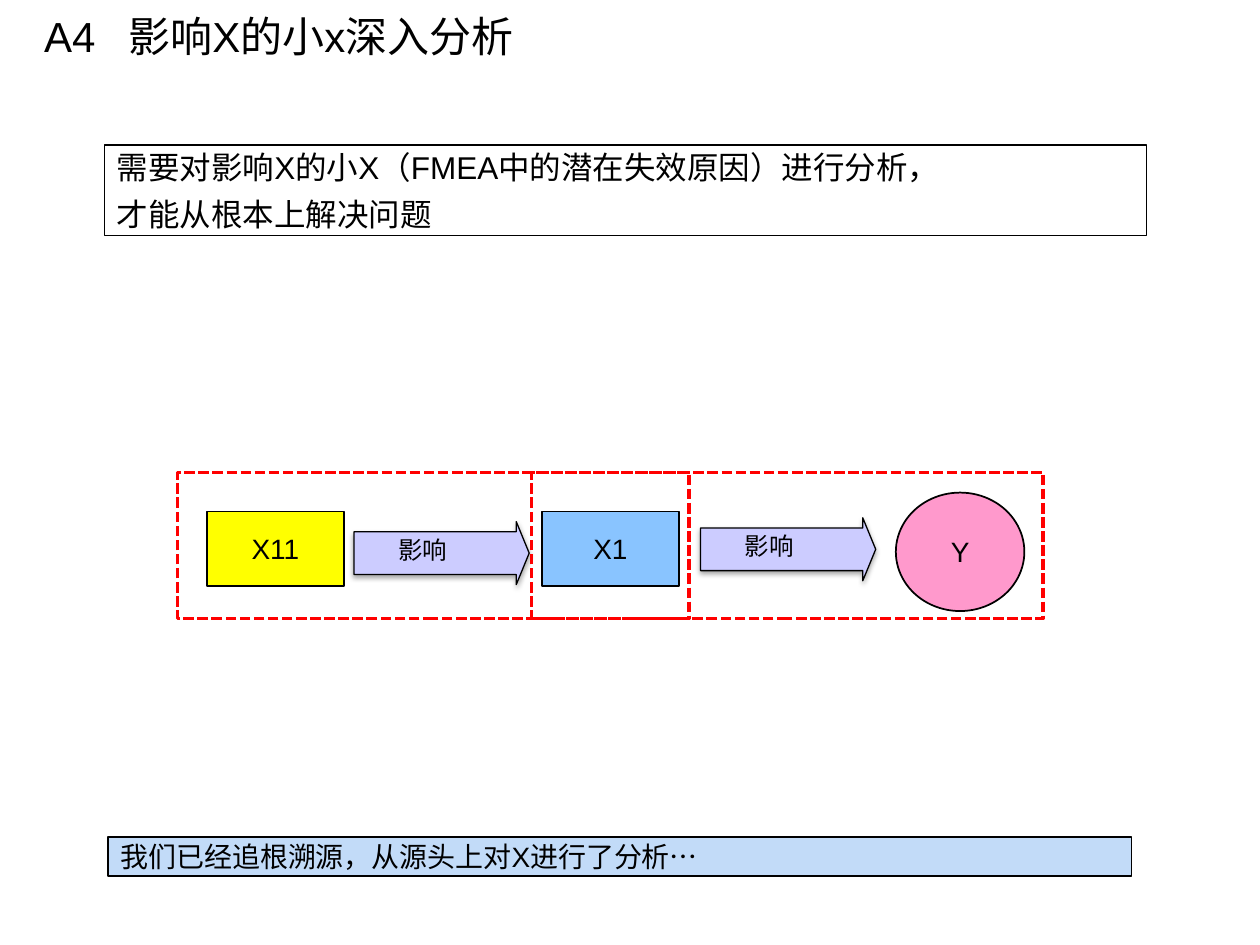
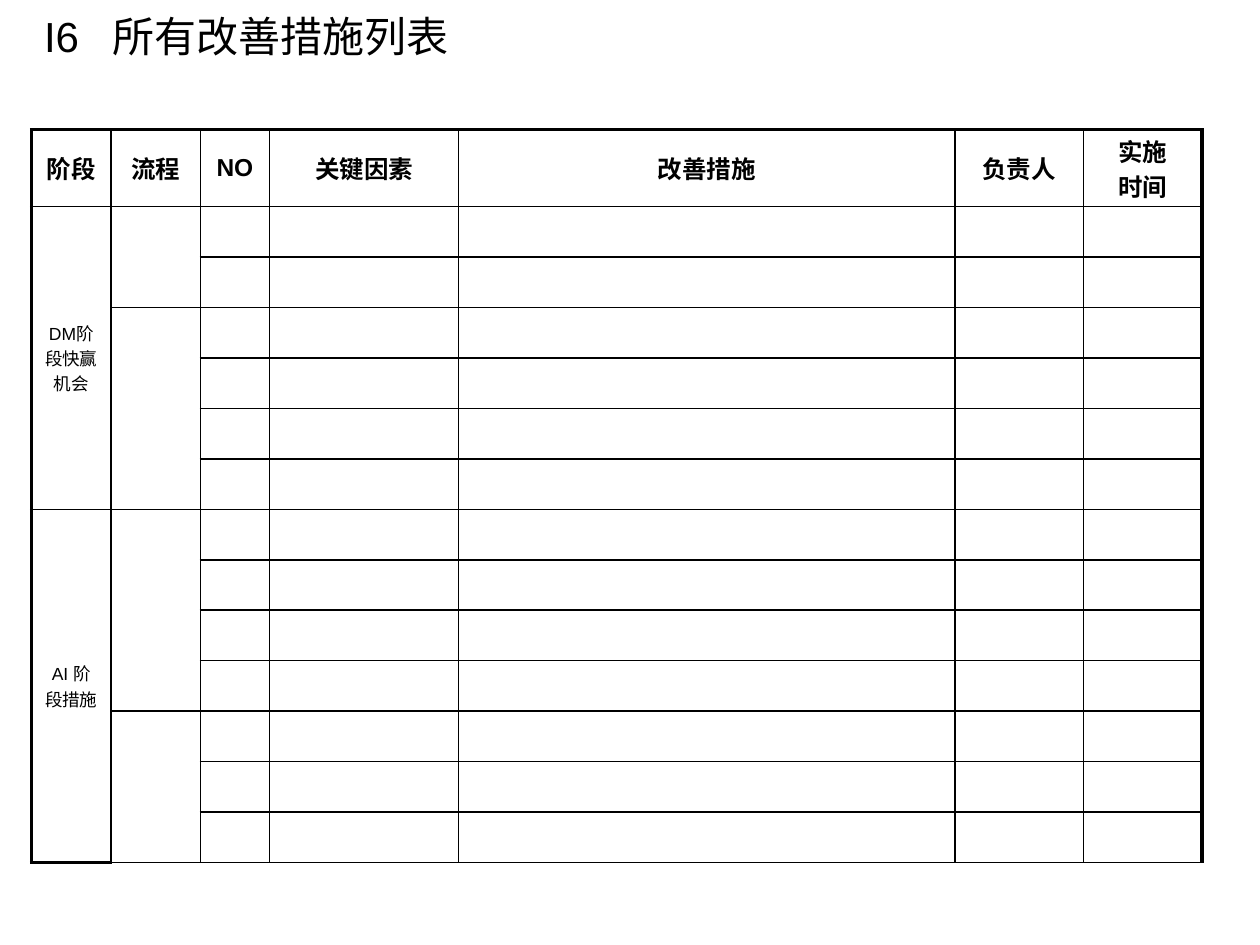
from lxml import etree
from pptx import Presentation
from pptx.dml.color import RGBColor
from pptx.enum.dml import MSO_LINE
from pptx.enum.shapes import MSO_SHAPE
from pptx.enum.text import MSO_ANCHOR, PP_ALIGN
from pptx.oxml import parse_xml
from pptx.oxml.ns import nsdecls, qn
from pptx.util import Inches, Pt

FONT = "Arial"
BLACK = RGBColor(0x00, 0x00, 0x00)
WHITE = RGBColor(0xFF, 0xFF, 0xFF)
PALE_BLUE = RGBColor(0xC2, 0xDB, 0xF8)
BLUE = RGBColor(0x89, 0xC4, 0xFF)
YELLOW = RGBColor(0xFF, 0xFF, 0x00)
PINK = RGBColor(0xFF, 0x99, 0xCC)
LAVENDER = RGBColor(0xCC, 0xCC, 0xFF)
RED = RGBColor(0xFF, 0x00, 0x00)

# Title number, title words, tab position between them
ANALYSIS_TITLE = ("A4", "影响X的小x深入分析", 0.67)
MEASURES_TITLE = ("I6", "所有改善措施列表", 0.54)

STATEMENT = ["需要对影响X的小X（FMEA中的潜在失效原因）进行分析，", "才能从根本上解决问题"]
CONCLUSION = ["我们已经追根溯源，从源头上对X进行了分析…"]

# Text, preset, fill, left, top, width, height
FACTORS = [
    ("X11", MSO_SHAPE.RECTANGLE, YELLOW, 1.64, 4.06, 1.09, 0.59),
    ("X1", MSO_SHAPE.RECTANGLE, BLUE, 4.3, 4.06, 1.09, 0.59),
    ("Y", MSO_SHAPE.OVAL, PINK, 7.11, 3.91, 1.02, 0.94),
]
INFLUENCE = "影响"
ARROW_PLACES = [(2.81, 4.14), (5.56, 4.11)]
LINK_FRAME_LEFTS = [1.41, 4.22]

HEADERS = [["阶段"], ["流程"], ["NO"], ["关键因素"], ["改善措施"], ["负责人"], ["实施", "时间"]]
COLUMN_WIDTHS = [0.63, 0.71, 0.55, 1.5, 3.94, 1.02, 0.94]
HEADER_HEIGHT, ROW_HEIGHT = 0.61, 0.4
# Stage name and the number of rows of each of its processes
STAGES = [("DM阶段快赢机会", [2, 4]), ("AI 阶段措施", [4, 3])]
THIN, THICK = 1, 2.25


def write(frame, lines, size, align=PP_ALIGN.LEFT, bold=False, gap=0, tab=None):
    frame.word_wrap = True
    for index, line in enumerate(lines):
        paragraph = frame.add_paragraph() if index else frame.paragraphs[0]
        paragraph.text = line
        paragraph.alignment = align
        if index:
            paragraph.space_before = Pt(gap)
        if tab:
            stops = etree.SubElement(paragraph._p.get_or_add_pPr(), qn("a:tabLst"))
            etree.SubElement(stops, qn("a:tab"), pos=str(Inches(tab)), algn="l")
        font = paragraph.font
        font.name, font.size, font.bold = FONT, Pt(size), bold
        font.color.rgb = BLACK


def add_text(slide, lines, size, place, left_inset=0, anchor=MSO_ANCHOR.TOP, **style):
    frame = slide.shapes.add_textbox(*map(Inches, place)).text_frame
    frame.margin_left = Inches(left_inset)
    frame.margin_top = frame.margin_right = frame.margin_bottom = 0
    frame.vertical_anchor = anchor
    write(frame, lines, size, **style)


def add_shape(slide, preset, place, fill, line=BLACK, weight=1):
    shape = slide.shapes.add_shape(preset, *map(Inches, place))
    shape.shadow.inherit = False
    if fill is None:
        shape.fill.background()
    else:
        shape.fill.solid()
        shape.fill.fore_color.rgb = fill
    shape.line.color.rgb = line
    shape.line.width = Pt(weight)
    shape.text_frame.vertical_anchor = MSO_ANCHOR.MIDDLE
    return shape


def add_titled_slide(presentation, title):
    slide = presentation.slides.add_slide(presentation.slide_layouts[6])
    number, words, tab = title
    add_text(slide, [f"{number}\t{words}"], 24, (0.15, 0.08, 7.34, 0.4), left_inset=0.2, tab=tab)
    return slide


def add_influence_arrow(slide, left, top):
    arrow = add_shape(slide, MSO_SHAPE.RIGHT_ARROW, (left, top, 1.39, 0.5), LAVENDER, weight=0.75)
    arrow.adjustments[0], arrow.adjustments[1] = 0.678, 0.205
    effects = arrow._element.spPr.find(qn("a:effectLst"))
    effects.append(parse_xml(
        f'<a:outerShdw {nsdecls("a")} blurRad="{Pt(3.1)}" dist="{Pt(1.8)}" dir="5400000" '
        'rotWithShape="0"><a:srgbClr val="000000"><a:alpha val="35000"/></a:srgbClr></a:outerShdw>'))
    add_text(slide, [INFLUENCE], 14, (left, top + 0.1, 1.09, 0.24),
             anchor=MSO_ANCHOR.MIDDLE, align=PP_ALIGN.CENTER)


def build_analysis(presentation):
    slide = add_titled_slide(presentation, ANALYSIS_TITLE)
    statement = add_shape(slide, MSO_SHAPE.RECTANGLE, (0.83, 1.15, 8.27, 0.72), WHITE, weight=0.75)
    write(statement.text_frame, STATEMENT, 18, gap=5)
    conclusion = add_shape(slide, MSO_SHAPE.RECTANGLE, (0.86, 6.64, 8.12, 0.31), PALE_BLUE)
    write(conclusion.text_frame, CONCLUSION, 16)
    for left, top in ARROW_PLACES:
        add_influence_arrow(slide, left, top)
    for name, preset, fill, *place in FACTORS:
        factor = add_shape(slide, preset, place, fill)
        write(factor.text_frame, [name], 16, align=PP_ALIGN.CENTER)
    for left in LINK_FRAME_LEFTS:
        frame = add_shape(slide, MSO_SHAPE.RECTANGLE, (left, 3.75, 4.06, 1.16), None, RED, 2)
        frame.line.dash_style = MSO_LINE.SQUARE_DOT


def set_borders(cell, weights):
    properties = cell._tc.get_or_add_tcPr()
    for side, weight in weights.items():
        properties.append(parse_xml(
            f'<a:ln{side} {nsdecls("a")} w="{Pt(weight)}"><a:solidFill>'
            f'<a:srgbClr val="{BLACK}"/></a:solidFill></a:ln{side}>'))


def write_headers(table):
    """Fill the first row; without vertical margins its two-line cell fits."""
    for cell, lines in zip(table.rows[0].cells, HEADERS):
        cell.margin_top = cell.margin_bottom = 0
        write(cell.text_frame, lines, 14, PP_ALIGN.CENTER, bold=True)


def merge_stages(table):
    """Join the stage and process cells; return the stage cells."""
    stage_cells = []
    row = 1
    for name, process_rows in STAGES:
        stage = table.cell(row, 0)
        stage.merge(table.cell(row + sum(process_rows) - 1, 0))
        write(stage.text_frame, [name], 10, align=PP_ALIGN.CENTER)
        stage_cells.append(stage)
        for count in process_rows:
            table.cell(row, 1).merge(table.cell(row + count - 1, 1))
            row += count
    return stage_cells


def build_measures(presentation):
    slide = add_titled_slide(presentation, MEASURES_TITLE)
    heights = [HEADER_HEIGHT] + [ROW_HEIGHT] * sum(sum(rows) for _, rows in STAGES)
    place = (0.25, 1.03, sum(COLUMN_WIDTHS), sum(heights))
    table = slide.shapes.add_table(len(heights), len(HEADERS), *map(Inches, place)).table
    table.first_row = table.horz_banding = False
    style = table._tbl.tblPr.find(qn("a:tableStyleId"))
    style.text = "{2D5ABB26-0587-4C30-8999-92F81FD0307C}"
    for column, width in zip(table.columns, COLUMN_WIDTHS):
        column.width = Inches(width)
    for row, height in zip(table.rows, heights):
        row.height = Inches(height)
    write_headers(table)
    last_stage = merge_stages(table)[-1]

    last_column = len(HEADERS) - 1
    for row_index, row in enumerate(table.rows):
        for column, cell in enumerate(row.cells):
            weights = {"L": THIN if column else THICK,
                       "R": THICK if column == last_column else THIN}
            if not cell.is_spanned:
                weights["T"] = THIN if row_index else THICK
                weights["B"] = THICK if cell == last_stage else THIN
            set_borders(cell, weights)
            cell.fill.solid()
            cell.fill.fore_color.rgb = WHITE
            cell.vertical_anchor = MSO_ANCHOR.MIDDLE


def main():
    presentation = Presentation()
    presentation.slide_width, presentation.slide_height = Inches(10), Inches(7.5)
    build_analysis(presentation)
    build_measures(presentation)
    presentation.save("out.pptx")


if __name__ == "__main__":
    main()
